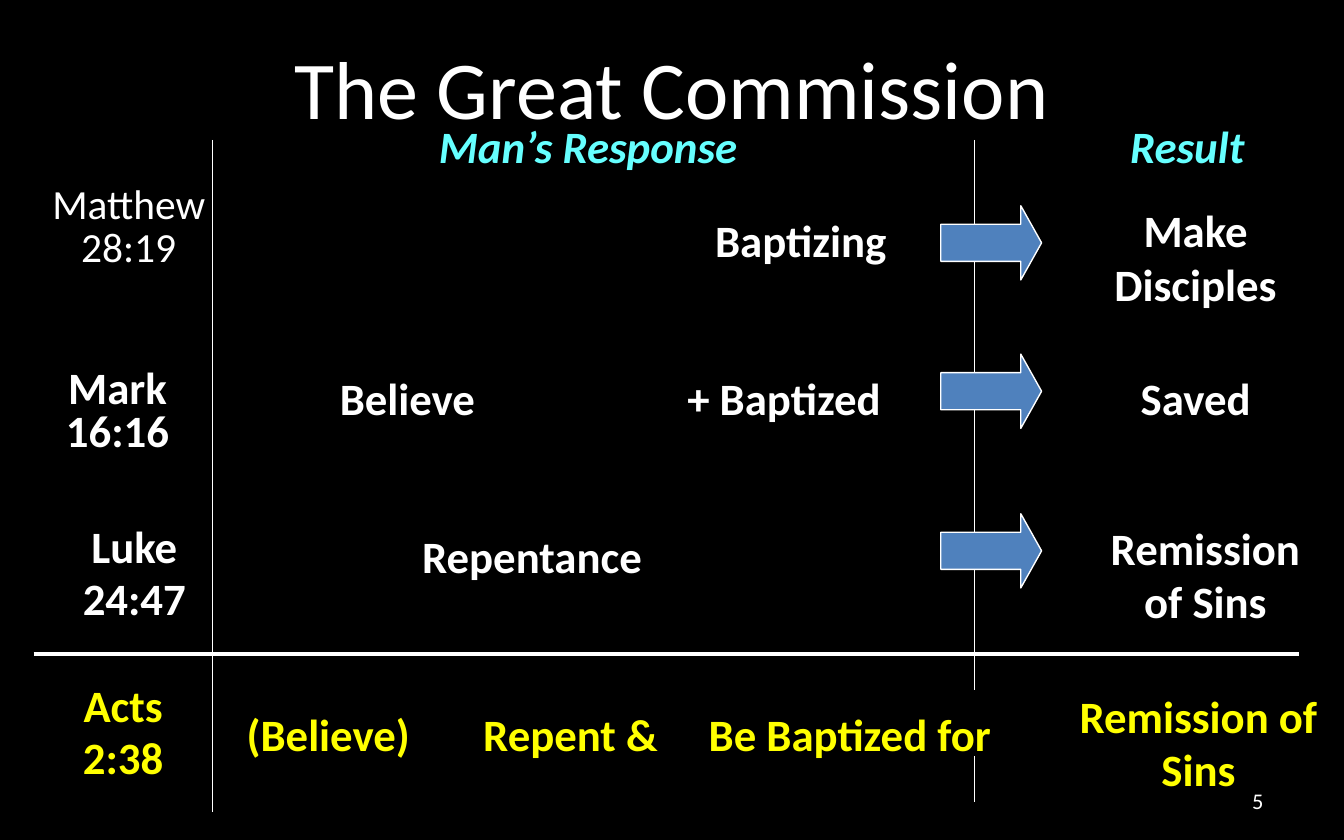
from lxml.etree import SubElement
from pptx import Presentation
from pptx.dml.color import RGBColor
from pptx.enum.shapes import MSO_CONNECTOR, MSO_SHAPE
from pptx.enum.text import MSO_ANCHOR, PP_ALIGN
from pptx.oxml.ns import qn
from pptx.util import Pt

PX = 9525  # 96 px to the inch
WHITE, YELLOW, CYAN, BLUE, BLACK = "FFFFFF", "FFFF00", "66FFFF", "4F81BD", "000000"


def paint(target, color):
    """Give a fill, or the fill of a line, one solid colour."""
    target.solid()
    target.fore_color.rgb = RGBColor.from_string(color)


def add_text(text, left, top, width, height, color=WHITE, size=24, bold=True,
             italic=False, spacing=1.0, align=PP_ALIGN.CENTER, anchor=MSO_ANCHOR.TOP):
    """Newlines in text part paragraphs; vertical tabs break lines."""
    box = slide.shapes.add_textbox(left * PX, top * PX, width * PX, height * PX)
    frame = box.text_frame
    frame.word_wrap = True
    frame.vertical_anchor = anchor
    frame.text = text
    for number, paragraph in enumerate(frame.paragraphs):
        paragraph.alignment = align
        paragraph.line_spacing = spacing
        paragraph.space_before = Pt(size * 0.2 if number else 0)
        font = paragraph.font
        font.name, font.size, font.bold, font.italic = "Calibri", Pt(size), bold, italic
        paint(font.fill, color)


prs = Presentation()
prs.slide_width, prs.slide_height = 960 * PX, 600 * PX
slide = prs.slides.add_slide(prs.slide_layouts[6])
paint(slide.background.fill, BLACK)

# Column rules and the line above the summary row
for x1, y1, x2, y2, weight in [
    (696, 100, 696, 493, 0.75),
    (696, 540, 696, 573, 0.75),
    (152, 100, 152, 580, 0.75),
    (24, 467, 928, 467, 2.25),
]:
    rule = slide.shapes.add_connector(
        MSO_CONNECTOR.STRAIGHT, x1 * PX, y1 * PX, x2 * PX, y2 * PX)
    paint(rule.line.fill, WHITE)
    rule.line.width = Pt(weight)
    SubElement(rule._element.spPr, qn("a:effectLst"))

# Title, headings and slide number
add_text("The Great Commission", 48, 12, 864, 100, size=44, bold=False,
         anchor=MSO_ANCHOR.MIDDLE)
add_text("Man’s Response", 264, 80, 312, 54, CYAN, italic=True)
add_text("Result", 768, 80, 160, 54, CYAN, italic=True)
add_text("5", 688, 556, 224, 32, size=12, bold=False,
         align=PP_ALIGN.RIGHT, anchor=MSO_ANCHOR.MIDDLE)

# Scripture references
add_text("Matthew\n28:19", 16, 132, 152, 66, size=22.2, bold=False, spacing=0.7)
add_text("Mark 16:16", 16, 260, 136, 66, spacing=0.8)
add_text("Luke\n24:47", 40, 373, 112, 80, spacing=0.8)
add_text("Acts\n2:38", 32, 487, 112, 80, YELLOW, spacing=0.8)

# Responses and results
for text, left, top, width, height, color in [
    ("Baptizing", 464, 147, 216, 54, WHITE),
    ("Believe", 211, 260, 160, 54, WHITE),
    ("+ Baptized", 470, 260, 180, 54, WHITE),
    ("Repentance", 272, 373, 216, 54, WHITE),
    ("Make\vDisciples", 762, 140, 184, 86, WHITE),
    ("Saved", 778, 260, 152, 47, WHITE),
    ("Remission\vof Sins", 762, 367, 198, 86, WHITE),
    ("(Believe)", 166, 500, 137, 48, YELLOW),
    ("Repent &", 335, 500, 145, 48, YELLOW),
    ("Be Baptized for", 492, 500, 230, 48, YELLOW),
    ("Remission of Sins", 752, 487, 208, 87, YELLOW),
]:
    add_text(text, left, top, width, height, color)

for top in (147, 253, 367):
    arrow = slide.shapes.add_shape(
        MSO_SHAPE.RIGHT_ARROW, 672 * PX, top * PX, 72 * PX, 53 * PX)
    arrow.adjustments[1] = 0.28
    arrow.shadow.inherit = False
    paint(arrow.fill, BLUE)
    paint(arrow.line.fill, WHITE)
    arrow.line.width = Pt(0.75)

prs.save("out.pptx")
